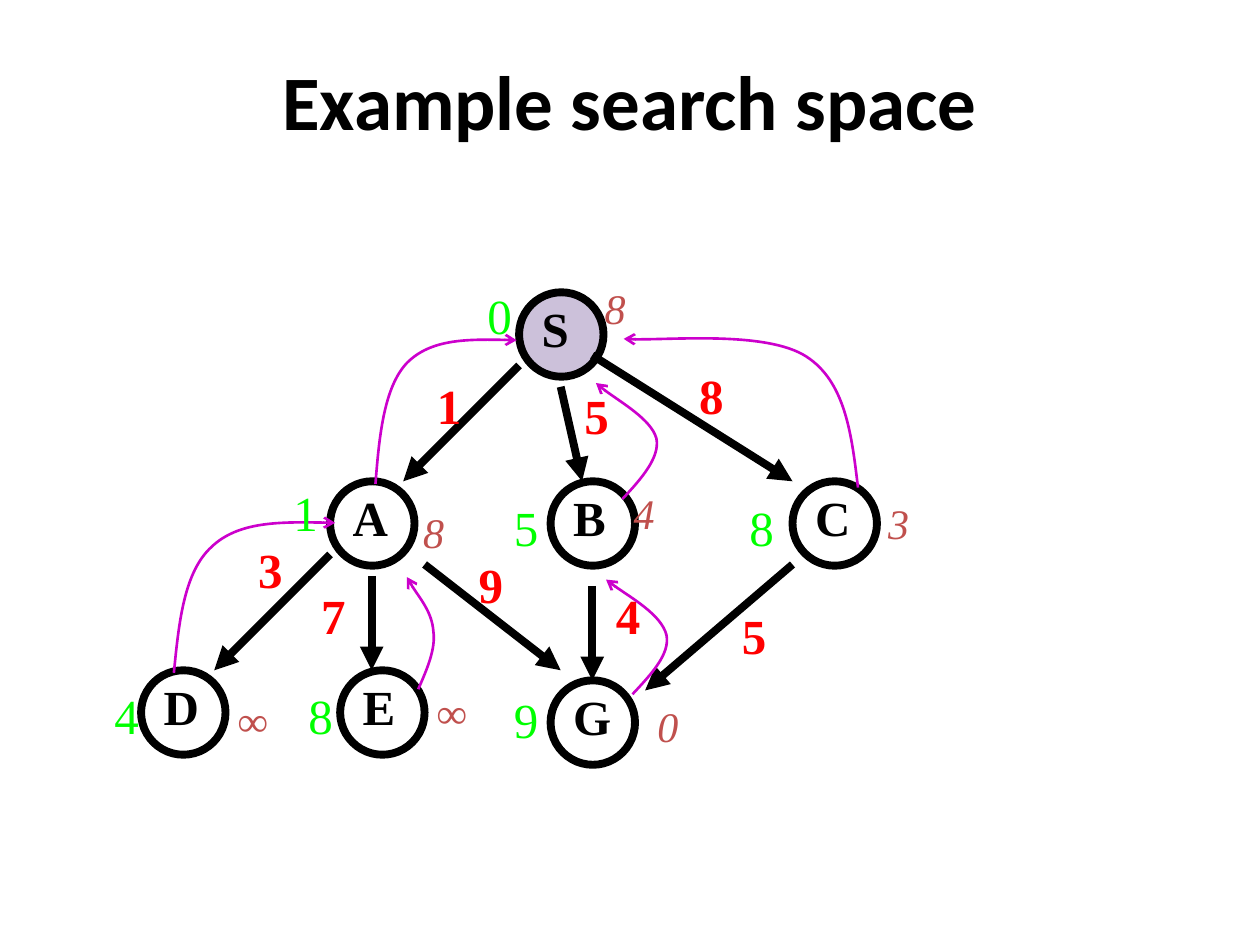
from dataclasses import dataclass

import lxml.etree
import pptx
import pptx.dml.color
import pptx.enum.shapes
import pptx.enum.text
import pptx.oxml.ns
import pptx.util

PX = 9144  # EMU in one px, 100 px to the inch
NODE_SIZE = 67
LABEL_HEIGHT = 57
COLORS = {
    "ink": "000000", "start": "CCC1DA", "edge_cost": "FF0000",
    "path_cost": "00FF00", "heuristic": "C0504D", "parent": "CC00CC",
}
SERIF = "Times New Roman"
qn = pptx.oxml.ns.qn


@dataclass(frozen=True)
class Node:
    name: str
    left: int
    top: int
    label_width: int
    fill: str = ""


@dataclass(frozen=True)
class LabelStyle:
    color: str
    size: int = 28
    bold: bool = False
    italic: bool = False
    height: int = LABEL_HEIGHT


@dataclass(frozen=True)
class Label:
    text: str
    left: int
    top: int
    width: int = 40


NODE_NAME = LabelStyle("ink", bold=True)
EDGE_COST = LabelStyle("edge_cost", bold=True)
PATH_COST = LabelStyle("path_cost")
HEURISTIC = LabelStyle("heuristic", size=24, italic=True, height=50)

NODES = [
    Node("S", 412, 232, 42, "start"),
    Node("C", 629, 382, 48),
    Node("B", 437, 382, 46),
    Node("A", 262, 382, 48),
    Node("D", 112, 532, 48),
    Node("G", 437, 540, 50),
    Node("E", 270, 532, 46),
]
# Each edge: start x, start y, end x, end y
EDGES = [
    (412, 290, 320, 382), (295, 457, 295, 532), (337, 448, 445, 532),
    (445, 307, 462, 382), (470, 282, 629, 382), (470, 465, 470, 540),
    (629, 448, 512, 548), (262, 440, 170, 532),
]
EDGE_COSTS = [
    Label("1", 337, 293), Label("5", 454, 301), Label("8", 545, 285),
    Label("9", 370, 435), Label("4", 479, 460), Label("5", 579, 476),
    Label("3", 195, 423), Label("7", 245, 460),
]
HEURISTICS = [
    Label("8", 470, 219, 37), Label("8", 326, 397, 37), Label("4", 493, 382, 37),
    Label("3", 695, 390, 37), Label("∞", 337, 540, 44), Label("∞", 179, 546, 44),
    Label("0", 512, 551, 37),
]
# Each curve: start point, then two Bézier pieces of three points
PARENT_CURVES = [
    [(298, 384), (301, 345), (305, 307), (323, 288), (342, 269), (376, 269), (410, 270)],
    [(138, 534), (142, 494), (146, 454), (168, 434), (189, 414), (227, 414), (266, 415)],
    [(332, 547), (339, 531), (346, 515), (344, 501), (343, 486), (326, 465), (323, 458)],
    [(502, 551), (517, 535), (532, 519), (529, 504), (525, 488), (489, 467), (481, 460)],
    [(494, 396), (509, 380), (524, 363), (521, 348), (517, 333), (481, 312), (473, 304)],
    [(681, 387), (676, 345), (671, 303), (640, 283), (609, 263), (520, 271), (495, 269)],
]
PATH_COSTS = [
    Label("0", 377, 222), Label("1", 223, 378), Label("4", 81, 539),
    Label("8", 235, 539), Label("9", 398, 542), Label("8", 585, 390),
    Label("5", 398, 390),
]


def emu(*lengths: int) -> list[int]:
    return [length * PX for length in lengths]


def rgb(name: str) -> pptx.dml.color.RGBColor:
    return pptx.dml.color.RGBColor.from_string(COLORS[name])


def style_line(shape, color: str, width: float, head: str = "") -> None:
    shape.line.color.rgb = rgb(color)
    shape.line.width = pptx.util.Pt(width)
    if head:
        outline = shape._element.spPr.find(qn("a:ln"))
        lxml.etree.SubElement(outline, qn("a:tailEnd"), type=head)


def style_run(run, font: str, style: LabelStyle) -> None:
    run.font.name = font
    run.font.size = pptx.util.Pt(style.size)
    run.font.bold = style.bold
    run.font.italic = style.italic
    run.font.color.rgb = rgb(style.color)


def draw_title(slide, text: str) -> None:
    title = slide.shapes.title
    title.left, title.top, title.width, title.height = emu(75, 17, 850, 125)
    title.text_frame.text = text
    title.text_frame.vertical_anchor = pptx.enum.text.MSO_ANCHOR.MIDDLE
    paragraph = title.text_frame.paragraphs[0]
    paragraph.alignment = pptx.enum.text.PP_ALIGN.CENTER
    style_run(paragraph.runs[0], "Calibri", LabelStyle("ink", 44, bold=True))


def draw_label(slide, label: Label, style: LabelStyle) -> None:
    box = slide.shapes.add_textbox(*emu(label.left, label.top, label.width, style.height))
    frame = box.text_frame
    frame.word_wrap = False
    frame.auto_size = pptx.enum.text.MSO_AUTO_SIZE.SHAPE_TO_FIT_TEXT
    frame.text = label.text
    style_run(frame.paragraphs[0].runs[0], SERIF, style)


def draw_node(slide, node: Node) -> None:
    circle = slide.shapes.add_shape(
        pptx.enum.shapes.MSO_SHAPE.OVAL, *emu(node.left, node.top, NODE_SIZE, NODE_SIZE))
    circle.shadow.inherit = False
    if node.fill:
        circle.fill.solid()
        circle.fill.fore_color.rgb = rgb(node.fill)
    else:
        circle.fill.background()
    style_line(circle, "ink", 4.5)
    draw_label(slide, Label(node.name, node.left + 8, node.top, node.label_width), NODE_NAME)


def draw_edge(slide, ends: tuple[int, int, int, int]) -> None:
    connector = slide.shapes.add_connector(
        pptx.enum.shapes.MSO_CONNECTOR.STRAIGHT, *emu(*ends))
    style_line(connector, "ink", 4.5, "triangle")
    lxml.etree.SubElement(connector._element.spPr, qn("a:effectLst"))


def draw_parent_curve(slide, points: list[tuple[int, int]]) -> None:
    """Draw a polyline, then turn every three segments into one cubic Bézier."""
    builder = slide.shapes.build_freeform(*points[0], scale=PX)
    builder.add_line_segments(points[1:], close=False)
    curve = builder.convert_to_shape()
    curve.shadow.inherit = False
    curve.fill.background()
    style_line(curve, "parent", 1.5, "arrow")
    segments = list(curve._element.spPr.iter(qn("a:lnTo")))
    outline = segments[0].getparent()
    for first in range(0, len(segments), 3):
        bezier = lxml.etree.SubElement(outline, qn("a:cubicBezTo"))
        for segment in segments[first:first + 3]:
            bezier.append(segment[0])
            outline.remove(segment)


def main() -> None:
    presentation = pptx.Presentation()
    presentation.slide_width, presentation.slide_height = emu(1000, 750)
    slide = presentation.slides.add_slide(presentation.slide_layouts[5])
    draw_title(slide, "Example search space")
    for node in NODES:
        draw_node(slide, node)
    for edge in EDGES:
        draw_edge(slide, edge)
    for label in EDGE_COSTS:
        draw_label(slide, label, EDGE_COST)
    for label in HEURISTICS:
        draw_label(slide, label, HEURISTIC)
    for points in PARENT_CURVES:
        draw_parent_curve(slide, points)
    for label in PATH_COSTS:
        draw_label(slide, label, PATH_COST)
    presentation.save("out.pptx")


if __name__ == "__main__":
    main()
